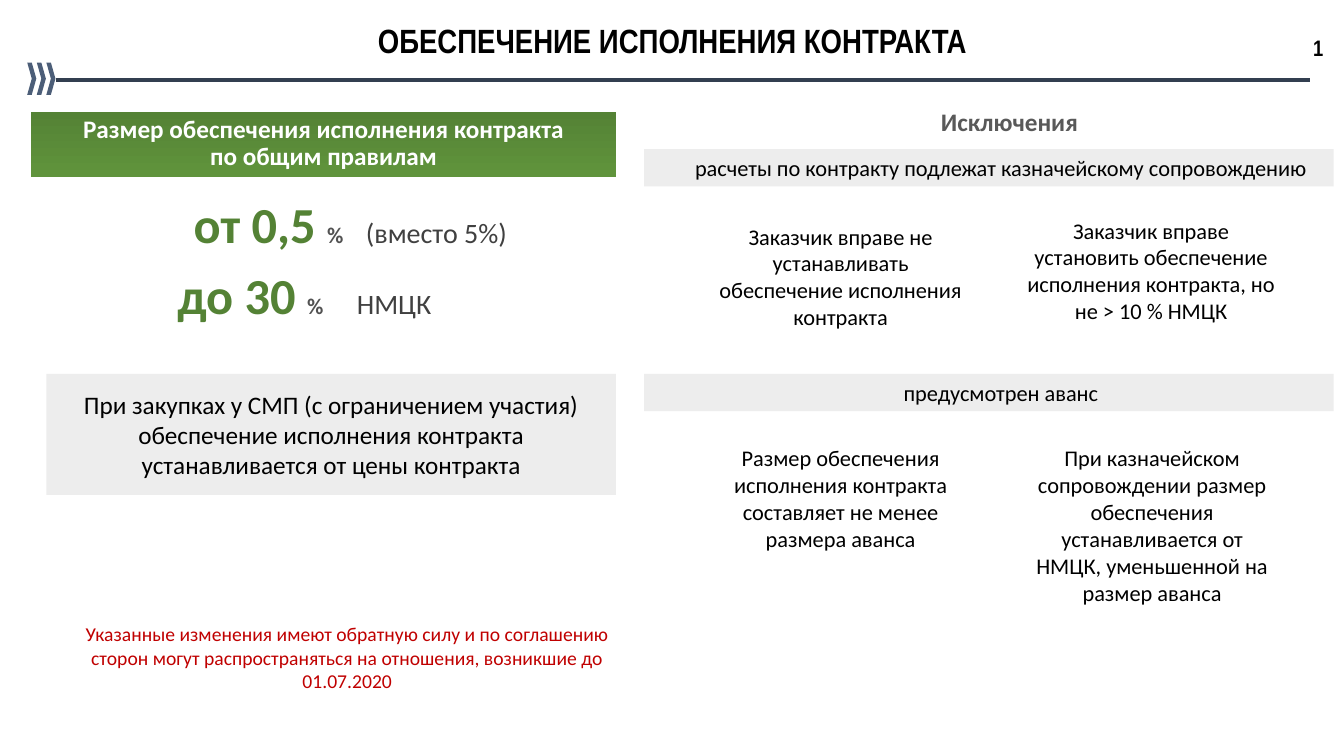
from dataclasses import dataclass
from typing import NamedTuple

from lxml.etree import SubElement
from pptx import Presentation
from pptx.dml.color import RGBColor
from pptx.enum.shapes import MSO_CONNECTOR, MSO_SHAPE
from pptx.enum.text import MSO_ANCHOR as Anchor, MSO_AUTO_SIZE as AutoSize, PP_ALIGN as Align
from pptx.oxml.ns import qn
from pptx.slide import Slide
from pptx.text.text import Font
from pptx.util import Inches, Pt

SLIDE_COLUMNS, SLIDE_ROWS = 133.33, 75
CELL = Inches(0.1)

COLORS = {
    "black": "000000",
    "white": "FFFFFF",
    "grey band": "EDEDED",
    "heading grey": "595959",
    "percent grey": "525252",
    "note grey": "404040",
    "green": "548235",
    "light green": "60943C",
    "chevron": "4C5E78",
    "rule": "333F50",
    "red": "C00000",
}


class Area(NamedTuple):
    column: float
    row: float
    columns: float
    rows: float


@dataclass(frozen=True)
class Block:
    area: Area
    text: str
    size: float = 16
    color: str = "black"
    bold: bool = False
    font: str = "Calibri"
    fills: tuple[str, ...] = ()
    align: Align = Align.CENTER
    anchor: Anchor = Anchor.TOP
    grows: bool = True
    wraps: bool = True
    indent: float = 0
    line_spacing: float = 1


@dataclass(frozen=True)
class Rate:
    area: Area
    limit: str
    note: str
    note_column: float


def band(row: float, text: str) -> Block:
    return Block(Area(63.9, row, 68.4, 3.7), text, fills=("grey band",), indent=2.4)


def case(column: float, row: float, rows: float, text: str) -> Block:
    return Block(Area(column, row, 26.6, rows), text)


BLOCKS = [
    Block(Area(4.6, 37.1, 56.5, 12),
          "При закупках у СМП (с ограничением участия) обеспечение исполнения контракта "
          "устанавливается от цены контракта",
          size=18, fills=("grey band",), anchor=Anchor.MIDDLE, grows=False),
    Block(Area(3.1, 11.1, 58, 6.5),
          "Размер обеспечения исполнения контракта\nпо общим правилам",
          size=18, color="white", bold=True, fills=("green", "light green"), line_spacing=0.9),
    Block(Area(72.8, 10.1, 54.7, 4), "Исключения", size=18, color="heading grey", bold=True),
    band(14.8, "расчеты по контракту подлежат казначейскому сопровождению"),
    Block(Area(129.3, 2.9, 3, 3.7), "1", bold=True, font="Arial Narrow",
          align=Align.LEFT, wraps=False),
    Block(Area(11.5, 0.8, 110.4, 6.3), "ОБЕСПЕЧЕНИЕ ИСПОЛНЕНИЯ КОНТРАКТА", size=24, bold=True,
          font="Arial Narrow", anchor=Anchor.MIDDLE, grows=False),
    case(70.1, 21.6, 11.8, "Заказчик вправе не устанавливать обеспечение исполнения контракта"),
    case(100.9, 21, 11.8,
         "Заказчик вправе установить обеспечение исполнения контракта, но не > 10 % НМЦК"),
    band(37.1, "предусмотрен аванс"),
    case(70.1, 43.6, 11.8,
         "Размер обеспечения исполнения контракта составляет не менее размера аванса"),
    case(101, 43.6, 17.2,
         "При казначейском сопровождении размер обеспечения устанавливается от НМЦК, "
         "уменьшенной на размер аванса"),
    Block(Area(5.4, 61.2, 58.1, 8.1),
          "Указанные изменения имеют обратную силу и по соглашению сторон могут "
          "распространяться на отношения, возникшие до 01.07.2020",
          size=14, color="red"),
]

RATES = [
    Rate(Area(19.2, 18.7, 32.7, 7.1), "от 0,5", "(вместо 5%)", 17.1),
    Rate(Area(17.6, 25.7, 32.2, 7.1), "до 30", "НМЦК", 17.8),
]


def rgb(name: str) -> RGBColor:
    return RGBColor.from_string(COLORS[name])


def cells(count: float) -> int:
    return round(count * CELL)


def place(area: Area) -> list[int]:
    return [cells(length) for length in area]


def style(font: Font, name: str, size: float, color: str, bold: bool) -> None:
    font.name, font.size, font.bold = name, Pt(size), bold
    font.color.rgb = rgb(color)


def add_filled(slide: Slide, kind: MSO_SHAPE, area: Area, fills: tuple[str, ...]):
    """One fill colour is solid; two run as a gradient from top to bottom."""
    shape = slide.shapes.add_shape(kind, *place(area))
    shape.shadow.inherit = False
    shape.line.fill.background()
    if len(fills) == 1:
        shape.fill.solid()
        shape.fill.fore_color.rgb = rgb(fills[0])
    else:
        shape.fill.gradient()
        shape.fill.gradient_angle = 270
        for stop, name in zip(shape.fill.gradient_stops, fills):
            stop.color.rgb = rgb(name)
    return shape


def add_block(slide: Slide, block: Block) -> None:
    if block.fills:
        shape = add_filled(slide, MSO_SHAPE.RECTANGLE, block.area, block.fills)
    else:
        shape = slide.shapes.add_textbox(*place(block.area))
    frame = shape.text_frame
    frame.text = block.text
    frame.word_wrap = block.wraps
    frame.vertical_anchor = block.anchor
    frame.auto_size = AutoSize.SHAPE_TO_FIT_TEXT if block.grows else AutoSize.NONE
    for paragraph in frame.paragraphs:
        paragraph.alignment = block.align
        paragraph.line_spacing = block.line_spacing
        if block.indent:
            paragraph._p.get_or_add_pPr().set("marL", str(cells(block.indent)))
        for run in paragraph.runs:
            style(run.font, block.font, block.size, block.color, block.bold)


def add_rate(slide: Slide, rate: Rate) -> None:
    """A large percentage with a note that starts at a tab stop."""
    frame = slide.shapes.add_textbox(*place(rate.area)).text_frame
    frame.word_wrap = True
    frame.auto_size = AutoSize.SHAPE_TO_FIT_TEXT
    frame.margin_left = frame.margin_right = 0
    paragraph = frame.paragraphs[0]
    paragraph.space_before = Pt(6)
    tabs = SubElement(paragraph._p.get_or_add_pPr(), qn("a:tabLst"))
    SubElement(tabs, qn("a:tab"), pos=str(cells(rate.note_column)), algn="l")
    for text, size, color, bold in (
        (f"{rate.limit} ", 36, "green", True),
        ("%", 16, "percent grey", True),
        (f"\t{rate.note}", 20, "note grey", False),
    ):
        run = paragraph.add_run()
        run.text = text
        style(run.font, "Calibri", size, color, bold)


def add_title_rule(slide: Slide) -> None:
    rule = slide.shapes.add_connector(
        MSO_CONNECTOR.STRAIGHT, cells(5.6), cells(7.9), cells(130), cells(7.9))
    rule.line.color.rgb = rgb("rule")
    rule.line.width = Pt(2.75)
    SubElement(rule._element.spPr, qn("a:effectLst"))
    for index in range(3):
        area = Area(2.7 + 0.95 * index, 6.2, 0.9, 3.2)
        add_filled(slide, MSO_SHAPE.CHEVRON, area, ("chevron",))


def main() -> None:
    presentation = Presentation()
    presentation.slide_width = cells(SLIDE_COLUMNS)
    presentation.slide_height = cells(SLIDE_ROWS)
    slide = presentation.slides.add_slide(presentation.slide_layouts[6])
    add_title_rule(slide)
    for block in BLOCKS:
        add_block(slide, block)
    for rate in RATES:
        add_rate(slide, rate)
    presentation.save("out.pptx")


if __name__ == "__main__":
    main()
